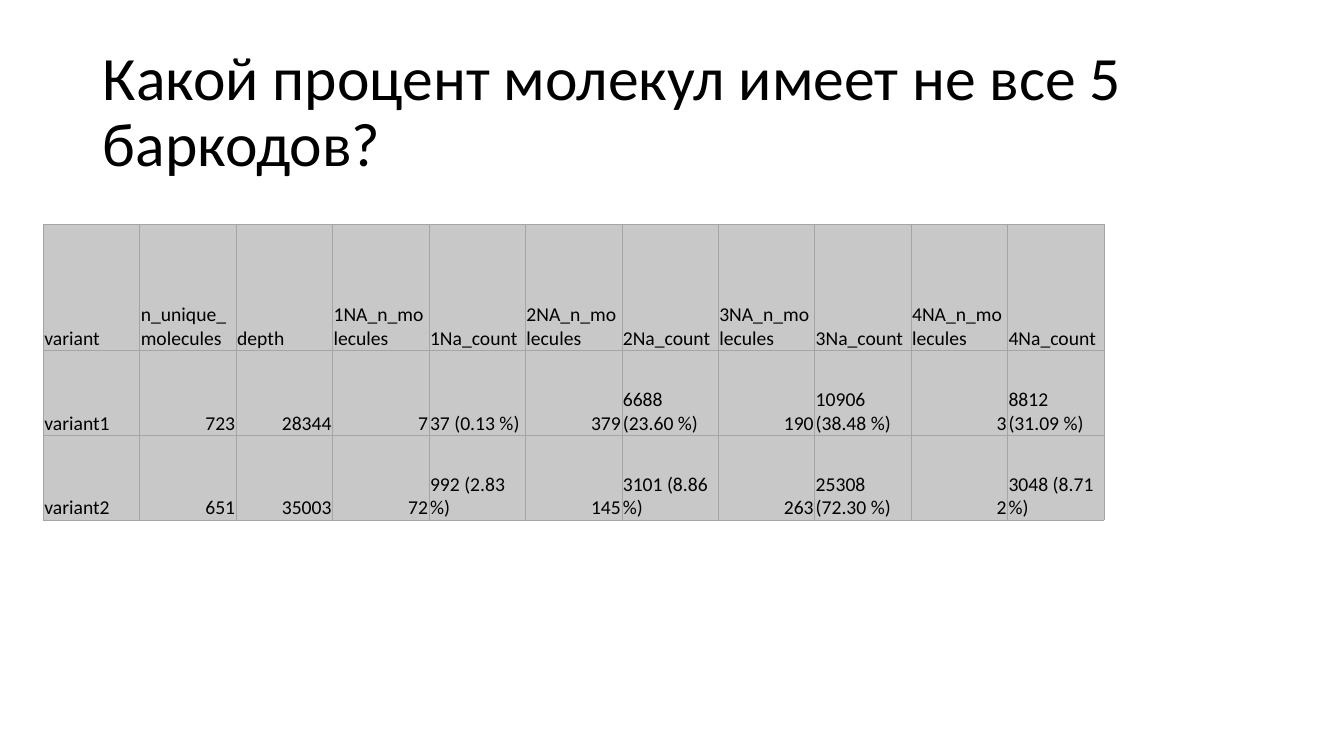
from lxml import etree
from pptx import Presentation
from pptx.dml.color import RGBColor
from pptx.enum.text import MSO_ANCHOR, MSO_AUTO_SIZE, PP_ALIGN
from pptx.oxml.ns import qn
from pptx.util import Inches, Pt

LEFT, RIGHT = PP_ALIGN.LEFT, PP_ALIGN.RIGHT
MIDDLE, BOTTOM = MSO_ANCHOR.MIDDLE, MSO_ANCHOR.BOTTOM
NO_FIT = MSO_AUTO_SIZE.NONE
BLACK = RGBColor(0x00, 0x00, 0x00)
CELL_GRAY = RGBColor(0xC8, 0xC8, 0xC8)
BORDER_GRAY = RGBColor(0xA5, 0xA5, 0xA5)

HEADER = ["variant", "n_unique_molecules", "depth"] + [
    f"{n}{suffix}" for n in range(1, 5) for suffix in ("NA_n_molecules", "Na_count")]
ROWS = [
    HEADER,
    ["variant1", "723", "28344", "7", "37 (0.13 %)", "379", "6688 (23.60 %)",
     "190", "10906 (38.48 %)", "3", "8812 (31.09 %)"],
    ["variant2", "651", "35003", "72", "992 (2.83 %)", "145", "3101 (8.86 %)",
     "263", "25308 (72.30 %)", "2", "3048 (8.71 %)"],
]
ROW_HEIGHTS = [1.25, 0.84, 0.84]


def set_attributes(target, values):
    for name, value in values.items():
        setattr(target, name, value)


class SlideBuilder:
    font_name = "Calibri"
    cell_format = {
        "vertical_anchor": BOTTOM,
        "margin_left": Inches(0.01),
        "margin_right": Inches(0.01),
        "margin_top": Inches(0.01),
        "margin_bottom": 0,
    }

    def __init__(self, slide):
        self.s = slide

    def style(self, p, text, size, alignment):
        p.alignment = alignment
        r = p.add_run()
        r.text = text
        set_attributes(r.font, {"name": self.font_name, "size": Pt(size), "bold": False})
        r.font.color.rgb = BLACK

    def title(self, text, left, top, width, height):
        sp = self.s.shapes.title
        set_attributes(sp, {"left": Inches(left), "top": Inches(top),
                            "width": Inches(width), "height": Inches(height)})
        tf = sp.text_frame
        set_attributes(tf, {"vertical_anchor": MIDDLE, "word_wrap": True, "auto_size": NO_FIT})
        p = tf.paragraphs[0]
        p.line_spacing = 0.9
        self.style(p, text, 44, LEFT)

    def borders(self, cell):
        tc_pr = cell._tc.get_or_add_tcPr()
        for side in ("a:lnL", "a:lnR", "a:lnT", "a:lnB"):
            line = etree.SubElement(tc_pr, qn(side), w=str(Pt(0.5)))
            fill = etree.SubElement(line, qn("a:solidFill"))
            etree.SubElement(fill, qn("a:srgbClr"), val=str(BORDER_GRAY))

    def table(self, rows, heights, left, top, width):
        columns = len(rows[0])
        table = self.s.shapes.add_table(
            len(rows), columns, Inches(left), Inches(top),
            Inches(width), Inches(sum(heights))).table
        set_attributes(table, {"first_row": False, "horz_banding": False})
        for column in table.columns:
            column.width = Inches(width / columns)
        for row, height, texts in zip(table.rows, heights, rows):
            row.height = Inches(height)
            for cell, text in zip(row.cells, texts):
                set_attributes(cell, self.cell_format)
                self.borders(cell)
                cell.fill.solid()
                cell.fill.fore_color.rgb = CELL_GRAY
                self.style(cell.text_frame.paragraphs[0], text, 14,
                           RIGHT if text.isdigit() else LEFT)


def main():
    prs = Presentation()
    prs.slide_width, prs.slide_height = Inches(13.33), Inches(7.5)
    builder = SlideBuilder(prs.slides.add_slide(prs.slide_layouts[5]))
    builder.title("Какой процент молекул имеет не все 5 баркодов?", 0.92, 0.4, 11.5, 1.45)
    builder.table(ROWS, ROW_HEIGHTS, 0.43, 2.23, 10.52)
    prs.save("out.pptx")


if __name__ == "__main__":
    main()
